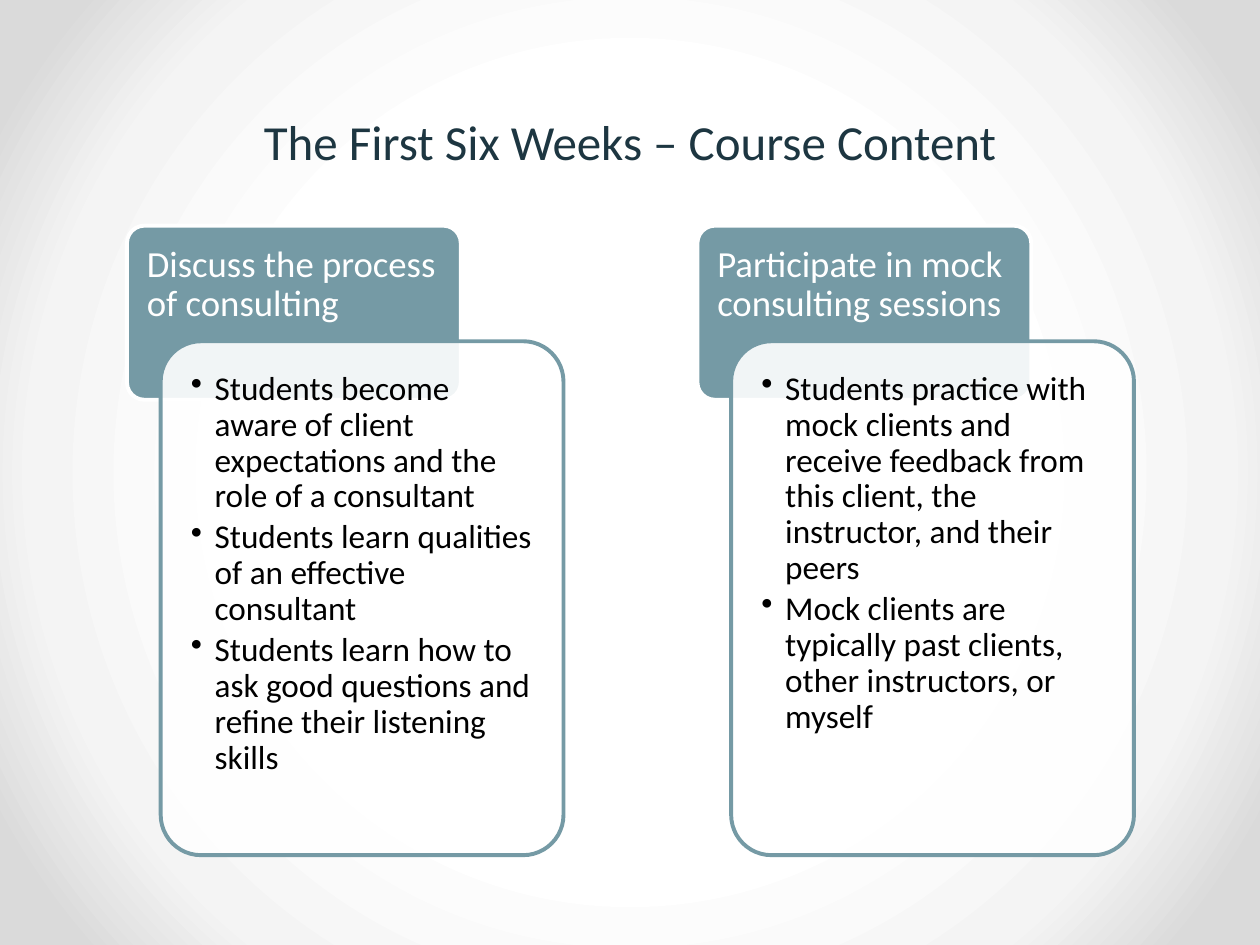
"""Build the course content slide with two headed cards."""
import lxml.etree
import pptx
import pptx.dml.color
import pptx.enum.shapes
import pptx.enum.text
import pptx.oxml
import pptx.oxml.ns
import pptx.util

Cm = pptx.util.Cm
Pt = pptx.util.Pt
qn = pptx.oxml.ns.qn
TEAL = "759AA5"
WHITE = "FFFFFF"
STEP = 11.5


def paint(color, code):
    color.rgb = pptx.dml.color.RGBColor.from_string(code)


def write(shapes, box, pad, lines, size, code, after=0):
    frame = shapes.add_textbox(*map(Cm, box)).text_frame
    frame.word_wrap = True
    frame.margin_left, frame.margin_top, frame.margin_right, frame.margin_bottom = map(Cm, pad)
    for i, line in enumerate(lines):
        para = frame.add_paragraph() if i else frame.paragraphs[0]
        para.space_after = Pt(after)
        run = para.add_run()
        run.text = line
        run.font.name = "Calibri"
        run.font.size = Pt(size)
        paint(run.font.color, code)
    return frame.paragraphs


deck = pptx.Presentation()
deck.slide_width, deck.slide_height = Cm(25.4), Cm(19.05)
slide = deck.slides.add_slide(deck.slide_layouts[6])

slide.background.fill.gradient()
grad = slide.element.find(".//" + qn("a:gradFill"))
for part in list(grad):
    grad.remove(part)
stops = lxml.etree.SubElement(grad, qn("a:gsLst"))
for pos, code in ((50, WHITE), (76, "F4F4F4"), (92, "DADADA")):
    stop = lxml.etree.SubElement(stops, qn("a:gs"), pos=str(pos * 1000))
    lxml.etree.SubElement(stop, qn("a:srgbClr"), val=code)
ring = lxml.etree.SubElement(grad, qn("a:path"), {"path": "circle"})
lxml.etree.SubElement(ring, qn("a:fillToRect"), dict.fromkeys("ltrb", "50000"))

title = write(slide.shapes, (1.27, 2.11, 22.86, 1.45), (0.25, 0.13, 0.25, 0.13),
              ["The First Six Weeks – Course Content"], 28, "1D3641")
title[0].alignment = pptx.enum.text.PP_ALIGN.CENTER

cards = (
    ("Discuss the process of consulting", (
        "Students become aware of client expectations and the role of a consultant",
        "Students learn qualities of an effective consultant",
        "Students learn how to ask good questions and refine their listening skills")),
    ("Participate in mock consulting sessions", (
        "Students practice with mock clients and receive feedback from this client, "
        "the instructor, and their peers",
        "Mock clients are typically past clients, other instructors, or myself")),
)
group = slide.shapes.add_group_shape().shapes
for i, (head, points) in enumerate(cards):
    left = 2.56 + i * STEP
    inner = left + 0.68
    plates = (((left, 4.55, 6.73, 3.51), TEAL, WHITE),
              ((inner, 6.88, 8.12, 10.36), WHITE, TEAL))
    for box, fill, edge in plates:
        plate = group.add_shape(pptx.enum.shapes.MSO_SHAPE.ROUNDED_RECTANGLE, *map(Cm, box))
        plate.shadow.inherit = False
        plate.adjustments[0] = 0.1
        plate.fill.solid()
        paint(plate.fill.fore_color, fill)
        paint(plate.line.color, edge)
        plate.line.width = Pt(2.25)
        if fill == TEAL:
            label = write(group, (left, 4.55, 6.73, 2.34), (0.4, 0.4, 0.4, 0.23),
                          [head], 21, WHITE, 7.35)
            label[0].line_spacing = 0.9
    tint = plate.element.spPr.find(qn("a:solidFill"))[0]
    lxml.etree.SubElement(tint, qn("a:alpha"), val="90000")
    items = write(group, (inner + 0.23, 7.11, 7.65, 9.9), (0.38,) * 4,
                  points, 19, "000000", 2.85)
    for item in items:
        item.line_spacing = 0.9
        props = item._p.get_or_add_pPr()
        props.set("marL", str(Cm(0.48)))
        props.set("indent", str(-Cm(0.48)))
        lxml.etree.SubElement(props, qn("a:buChar"), char="•")

deck.save("out.pptx")
